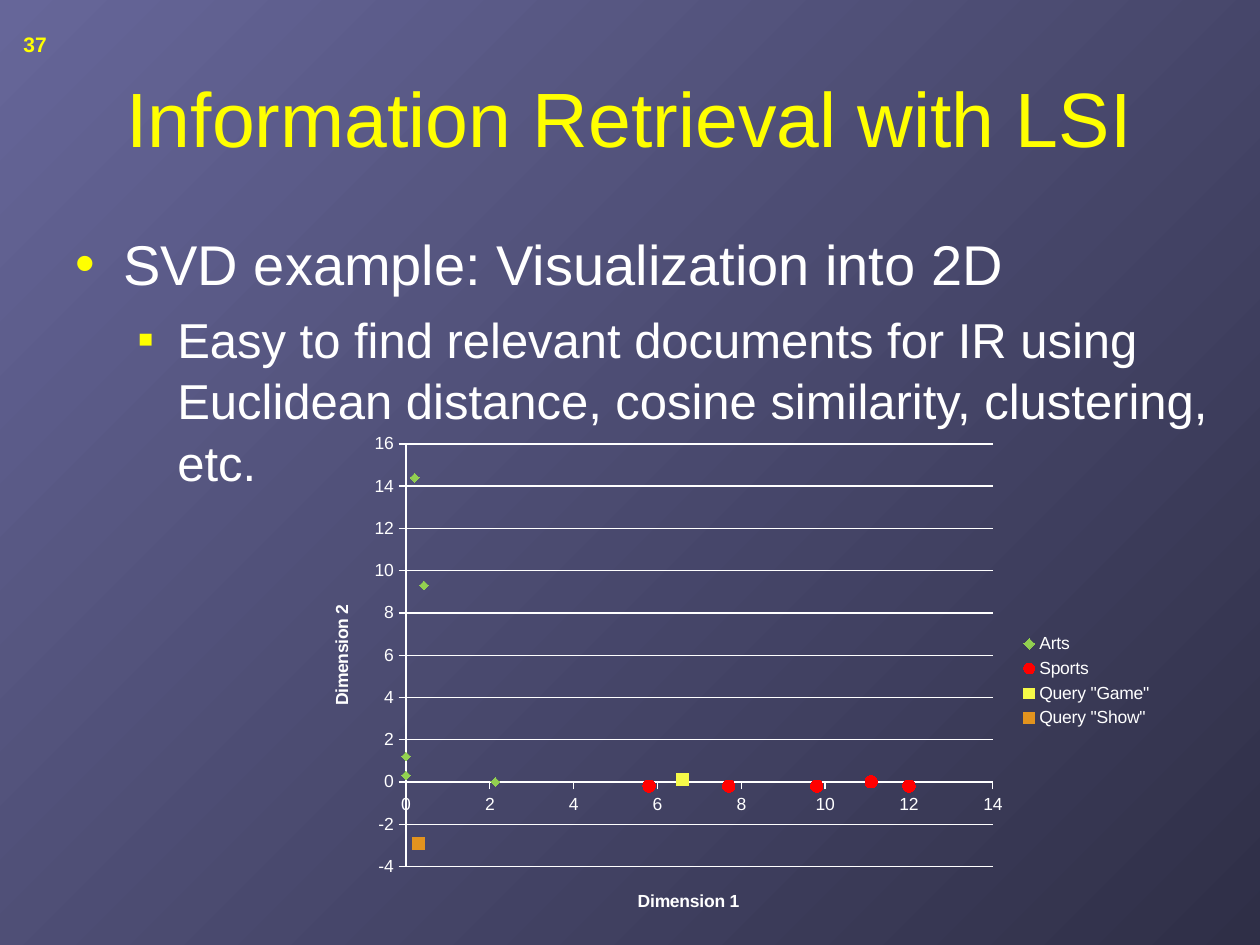
import pptx
import pptx.chart.data
import pptx.dml.color
import pptx.enum.chart
import pptx.enum.text
import pptx.util
from lxml import etree
from pptx.oxml.ns import qn

W, H = 10, 7.5
FONT, YELLOW, WHITE = "Arial", "FFFF00", "FFFFFF"
ALIGN = pptx.enum.text.PP_ALIGN
ANCHOR = pptx.enum.text.MSO_ANCHOR
MARKER = pptx.enum.chart.XL_MARKER_STYLE

# name, marker, marker size, colour, (x, y) points
SERIES = [
    ("Arts", MARKER.DIAMOND, 5, "92D050",
     [(0.43, 9.3), (0, 1.2), (0.21, 14.4), (0, 0.3), (2.13, 0)]),
    ("Sports", MARKER.CIRCLE, 7, "FF0000",
     [(5.8, -0.2), (11.1, 0), (7.7, -0.2), (12, -0.2), (9.8, -0.2)]),
    ('Query "Game"', MARKER.SQUARE, 7, "F6FA48", [(6.6, 0.1)]),
    ('Query "Show"', MARKER.SQUARE, 7, "E2931E", [(0.3, -2.9)]),
]


def rgb(code):
    return pptx.dml.color.RGBColor.from_string(code)


def box(left, top, width, height):
    return [pptx.util.Inches(v) for v in (left, top, width, height)]


def set_font(font, size, color, bold=False):
    font.name, font.size, font.bold = FONT, pptx.util.Pt(size), bold
    font.color.rgb = rgb(color)


def add_frame(s, area, anchor):
    tf = s.shapes.add_textbox(*box(*area)).text_frame
    tf.word_wrap = True
    tf.vertical_anchor = anchor
    return tf


def write(p, text, size, color=WHITE, bold=False, align=ALIGN.LEFT):
    p.alignment = align
    r = p.add_run()
    r.text = text
    set_font(r.font, size, color, bold)


def set_bullet(p, char, margin, hang, percent=100):
    pPr = p._p.get_or_add_pPr()
    pPr.set("marL", str(pptx.util.Inches(margin)))
    pPr.set("indent", str(-pptx.util.Inches(hang)))
    color = etree.SubElement(pPr, qn("a:buClr"))
    etree.SubElement(color, qn("a:srgbClr"), val=YELLOW)
    etree.SubElement(pPr, qn("a:buSzPct"), val=str(percent * 1000))
    etree.SubElement(pPr, qn("a:buFont"), typeface=FONT)
    etree.SubElement(pPr, qn("a:buChar"), char=char)


def set_background(s):
    fill = s.background.fill
    fill.gradient()
    fill.gradient_angle = 315
    for stop, position, color in zip(fill.gradient_stops, (0, 1), ("666699", "2F2F47")):
        stop.position = position
        stop.color.rgb = rgb(color)


def style_axis(axis, title, low, high, grid):
    axis.minimum_scale, axis.maximum_scale, axis.major_unit = low, high, 2
    axis.major_tick_mark = pptx.enum.chart.XL_TICK_MARK.OUTSIDE
    axis.has_major_gridlines = grid
    lines = [axis.format.line]
    if grid:
        lines.append(axis.major_gridlines.format.line)
    for line in lines:
        line.color.rgb = rgb(WHITE)
        line.width = pptx.util.Pt(0.75)
    axis.tick_labels.number_format = "General"
    axis.tick_labels.number_format_is_linked = False
    write(axis.axis_title.text_frame.paragraphs[0], title, 10, bold=True, align=ALIGN.CENTER)


def place_plot(chart, **shares):
    """Fix the inner plot area as shares of the chart's size."""
    plot_area = chart._chartSpace.chart.plotArea
    for old in plot_area.findall(qn("c:layout")):
        plot_area.remove(old)
    layout = etree.Element(qn("c:layout"))
    plot_area.insert(0, layout)
    manual = etree.SubElement(layout, qn("c:manualLayout"))
    settings = {"layoutTarget": "inner", "xMode": "edge", "yMode": "edge", **shares}
    for tag, value in settings.items():
        etree.SubElement(manual, qn("c:" + tag), val=str(value))


def add_scatter(s, area):
    data = pptx.chart.data.XyChartData()
    for name, _, _, _, points in SERIES:
        series = data.add_series(name)
        for x, y in points:
            series.add_data_point(x, y)
    kind = pptx.enum.chart.XL_CHART_TYPE.XY_SCATTER
    chart = s.shapes.add_chart(kind, *box(*area), data).chart
    set_font(chart.font, 10, WHITE)
    chart.has_title = False
    chart.has_legend = True
    chart.legend.position = pptx.enum.chart.XL_LEGEND_POSITION.RIGHT
    chart.legend.include_in_layout = False
    plot = chart.plots[0]
    plot.vary_by_categories = False
    for series, (_, style, size, color, _) in zip(plot.series, SERIES):
        series.smooth = False
        series.format.line.fill.background()
        marker = series.marker
        marker.style, marker.size = style, size
        marker.format.fill.solid()
        marker.format.fill.fore_color.rgb = rgb(color)
        marker.format.line.color.rgb = rgb(color)
    style_axis(chart.category_axis, "Dimension 1", 0, 14, False)
    style_axis(chart.value_axis, "Dimension 2", -4, 16, True)
    place_plot(chart, x=0.12, y=0.04, w=0.68, h=0.82)


def main():
    prs = pptx.Presentation()
    prs.slide_width, prs.slide_height = pptx.util.Inches(W), pptx.util.Inches(H)
    s = prs.slides.add_slide(prs.slide_layouts[6])
    set_background(s)

    tf = add_frame(s, (0.05 * W, 0.04 * H, 0.9 * W, 1.25), ANCHOR.MIDDLE)
    write(tf.paragraphs[0], "Information Retrieval with LSI", 44, YELLOW, align=ALIGN.CENTER)

    tf = add_frame(s, (0.05 * W, 1.77, 0.93 * W, 1.69), ANCHOR.TOP)
    p = tf.paragraphs[0]
    set_bullet(p, "•", 0.38, 0.38)
    write(p, "SVD example: Visualization into 2D", 32)
    p = tf.add_paragraph()
    p.level = 1
    set_bullet(p, "■", 0.81, 0.31, percent=50)
    p.space_before = pptx.util.Pt(5.6)
    p.line_spacing = 1.05
    write(p, "Easy to find relevant documents for IR using Euclidean distance, "
             "cosine similarity, clustering, etc.", 28)

    tf = add_frame(s, (0, 0, 0.47, 0.5), ANCHOR.BOTTOM)
    write(tf.paragraphs[0], "37", 12, YELLOW, bold=True, align=ALIGN.RIGHT)

    add_scatter(s, (0.24 * W, 3.36, 6.85, 4.09))
    prs.save("out.pptx")


if __name__ == "__main__":
    main()
